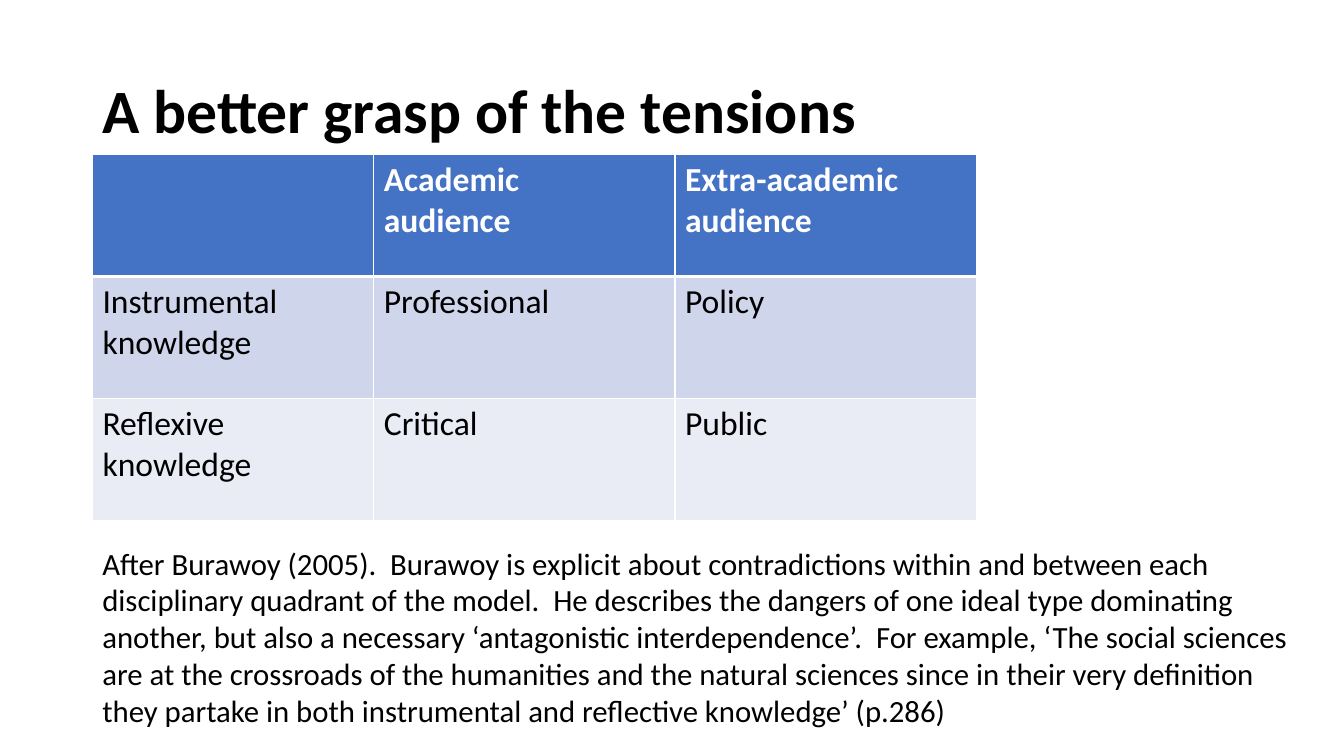
from lxml import etree
from pptx import Presentation, util as u
from pptx.dml.color import RGBColor
from pptx.enum import text
from pptx.oxml import ns

COLORS = {
    "ink": "000000",
    "white": "FFFFFF",
    "header": "4472C4",
    "band_dark": "CFD5EA",
    "band_light": "E9EBF5",
}
LEFT = 2.33
ROWS = [
    ["", "Academic\naudience", "Extra-academic audience"],
    ["Instrumental knowledge", "Professional", "Policy"],
    ["Reflexive knowledge", "Critical", "Public"],
]
FILLS = ["header", "band_dark", "band_light"]
COMMENTARY = (
    "After Burawoy (2005).  Burawoy is explicit about contradictions within and "
    "between each disciplinary quadrant of the model.  He describes the dangers of "
    "one ideal type dominating another, but also a necessary ‘antagonistic "
    "interdependence’.  For example, ‘The social sciences are at the crossroads of "
    "the humanities and the natural sciences since in their very definition they "
    "partake in both instrumental and reflective knowledge’ (p.286)"
)


class SlideBuilder:
    font = "Calibri"

    def __init__(self, page):
        self.page = page

    def set_text(self, frame, content, size, color="ink", bold=False):
        frame.text = content
        for para in frame.paragraphs:
            para.font.name = self.font
            para.font.size = u.Pt(size)
            para.font.bold = bold
            para.font.color.rgb = RGBColor.from_string(COLORS[color])

    def text_box(self, content, area, size, bold=False, spacing=1.0,
                 anchor=text.MSO_ANCHOR.TOP):
        box = self.page.shapes.add_textbox(*map(u.Cm, area))
        frame = box.text_frame
        frame.word_wrap = True
        frame.vertical_anchor = anchor
        self.set_text(frame, content, size, bold=bold)
        for para in frame.paragraphs:
            para.line_spacing = spacing

    def border(self, cell, widths):
        properties = cell._tc.get_or_add_tcPr()
        for index, (side, width) in enumerate(widths.items()):
            line = etree.Element(ns.qn(f"a:ln{side}"), w=str(u.Pt(width)))
            fill = etree.SubElement(line, ns.qn("a:solidFill"))
            etree.SubElement(fill, ns.qn("a:srgbClr"), val=COLORS["white"])
            properties.insert(index, line)

    def table(self, rows, fills, left, top, widths, height, size):
        area = (left, top, sum(widths), height * len(rows))
        grid = self.page.shapes.add_table(
            len(rows), len(widths), *map(u.Cm, area)).table
        for column, width in zip(grid.columns, widths):
            column.width = u.Cm(width)
        for r, values in enumerate(rows):
            grid.rows[r].height = u.Cm(height)
            header = r == 0
            for c, value in enumerate(values):
                cell = grid.cell(r, c)
                cell.fill.solid()
                cell.fill.fore_color.rgb = RGBColor.from_string(COLORS[fills[r]])
                self.set_text(cell.text_frame, value, size,
                              "white" if header else "ink", header)
                self.border(cell, {"L": 1, "R": 1, "T": 3 if r == 1 else 1,
                                   "B": 3 if header else 1})


def main():
    deck = Presentation()
    deck.slide_width, deck.slide_height = u.Cm(33.87), u.Cm(19.05)
    builder = SlideBuilder(deck.slides.add_slide(deck.slide_layouts[6]))
    builder.text_box("A better grasp of the tensions", (LEFT, 1.01, 29.21, 3.68),
                     44, bold=True, spacing=0.9, anchor=text.MSO_ANCHOR.MIDDLE)
    builder.table(ROWS, FILLS, LEFT, 3.89, [7.09, 7.59, 7.59], 3.08, 24)
    builder.text_box(COMMENTARY, (LEFT, 13.59, 30.45, 4.95), 22)
    deck.save("out.pptx")


if __name__ == "__main__":
    main()
